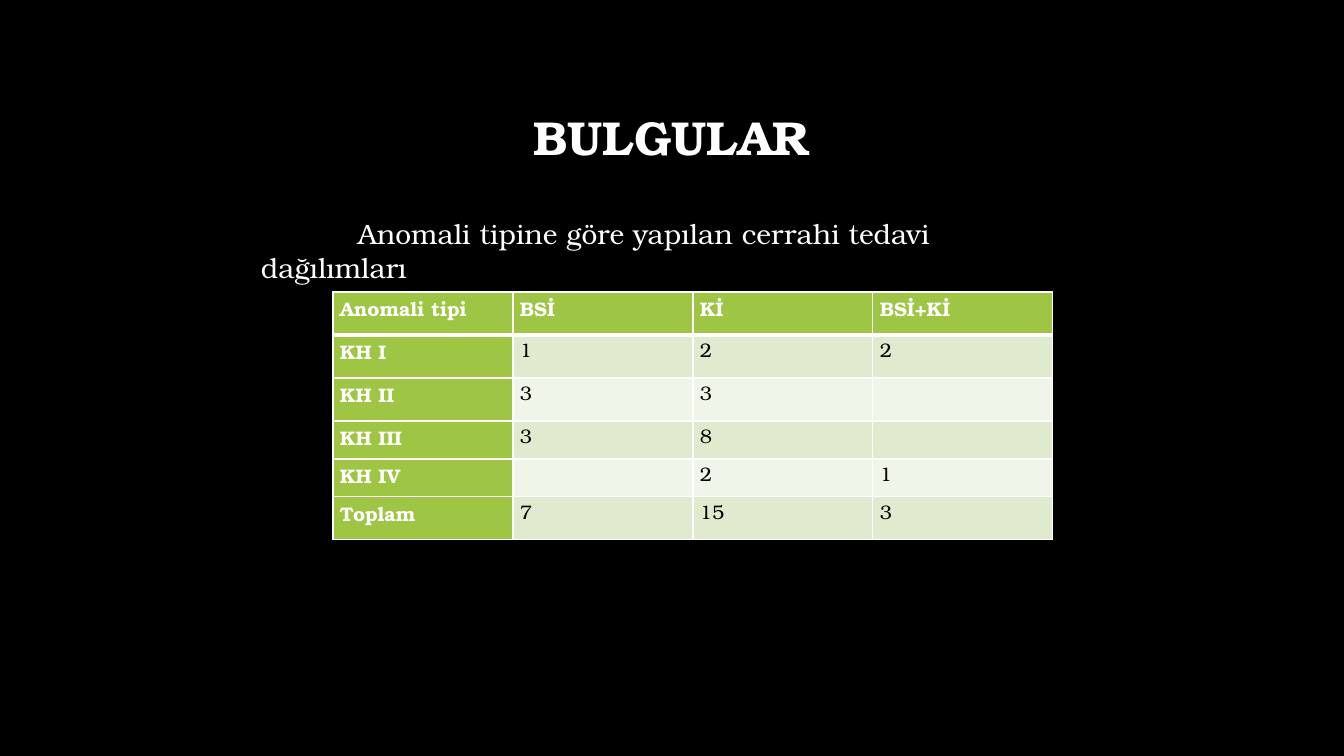
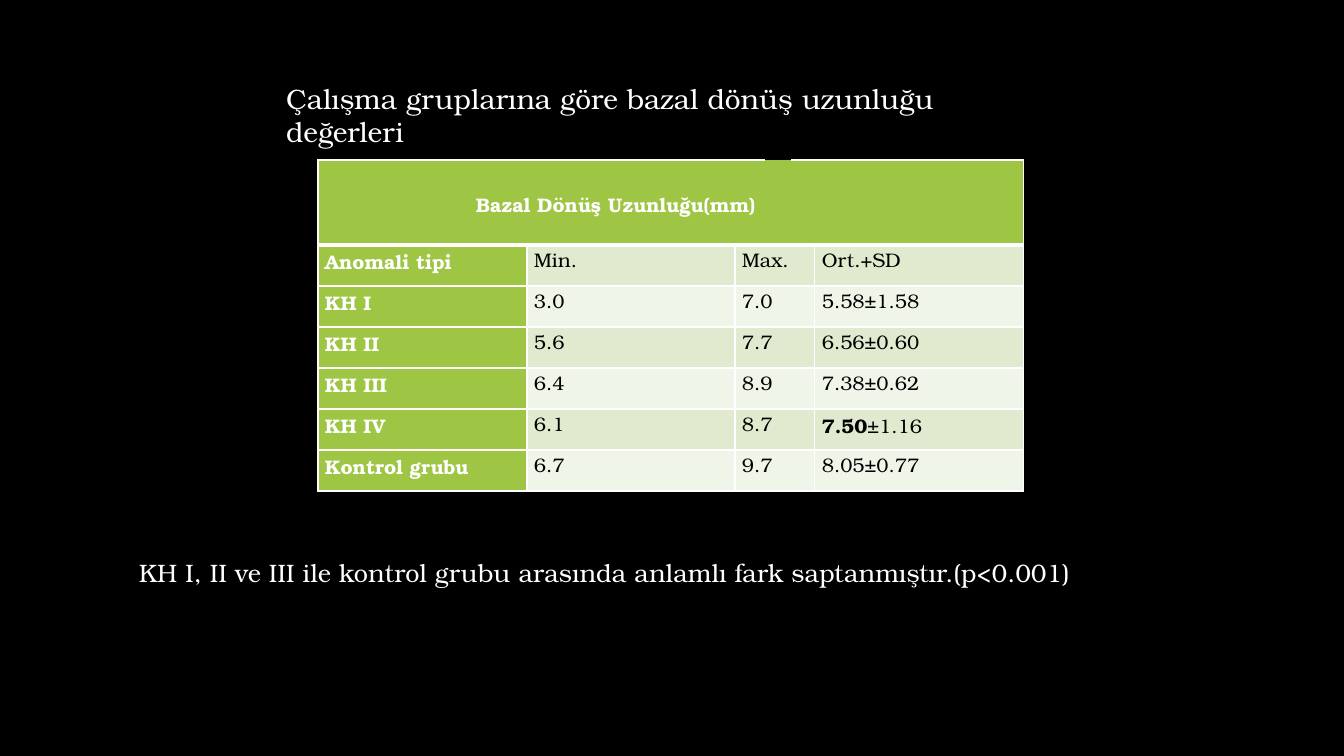
from lxml import etree
from pptx import Presentation
from pptx.dml.color import RGBColor
from pptx.enum.text import MSO_ANCHOR, MSO_AUTO_SIZE, PP_ALIGN
from pptx.oxml.ns import qn
from pptx.util import Pt

EMU_PER_PX = 12192000 / 1344
LEFT, CENTER, JUSTIFY = PP_ALIGN.LEFT, PP_ALIGN.CENTER, PP_ALIGN.JUSTIFY
TOP, MIDDLE = MSO_ANCHOR.TOP, MSO_ANCHOR.MIDDLE
NO_FIT = MSO_AUTO_SIZE.NONE
TITLE_ONLY = 5


def px(n):
    return round(n * EMU_PER_PX)


def rgb(color):
    return RGBColor.from_string(color)


class Deck:
    FONT = "TeX Gyre Bonum"
    BLACK, WHITE, GREEN = "000000", "FFFFFF", "9EC544"
    BANDS = ("F0F5E9", "DFEACF")

    def __init__(self):
        self.prs = Presentation()
        self.prs.slide_width, self.prs.slide_height = px(1344), px(756)
        fill = self.prs.slide_master.background.fill
        fill.solid()
        fill.fore_color.rgb = rgb(self.BLACK)

    def slide(self):
        self.s = self.prs.slides.add_slide(self.prs.slide_layouts[TITLE_ONLY])

    def set_text(self, tf, text, size, color, bold=False, align=LEFT, spacing=1.0):
        tf.text = text
        p = tf.paragraphs[0]
        p.alignment, p.line_spacing = align, spacing
        for r in p.runs:
            f = r.font
            f.name, f.size, f.bold = self.FONT, Pt(size), bold
            f.color.rgb = rgb(color)
        return p

    def title(self, text, x, y, w, h, size, bold=False, align=LEFT,
              anchor=TOP, spacing=1.0):
        sp = self.s.shapes.title
        sp.left, sp.top, sp.width, sp.height = px(x), px(y), px(w), px(h)
        tf = sp.text_frame
        tf.word_wrap, tf.auto_size, tf.vertical_anchor = True, NO_FIT, anchor
        self.set_text(tf, text, size, self.WHITE, bold, align, spacing)

    def text(self, text, x, y, w, h, size, indent=0):
        sp = self.s.shapes.add_textbox(px(x), px(y), px(w), px(h))
        tf = sp.text_frame
        tf.word_wrap = True
        p = self.set_text(tf, text, size, self.WHITE)
        self.indent(p, 0, indent)

    def indent(self, p, margin, first):
        pPr = p._p.get_or_add_pPr()
        pPr.set("marL", str(px(margin)))
        pPr.set("indent", str(px(first)))

    def borders(self, cell, thick_side, bare):
        tcPr = cell._tc.get_or_add_tcPr()
        for i, side in enumerate("LRTB"):
            ln = etree.Element(qn("a:ln" + side))
            ln.set("w", str(Pt(3 if side == thick_side else 1)))
            if side in bare:
                etree.SubElement(ln, qn("a:noFill"))
            else:
                fill = etree.SubElement(ln, qn("a:solidFill"))
                etree.SubElement(fill, qn("a:srgbClr")).set("val", self.WHITE)
            tcPr.insert(i, ln)

    def table(self, x, y, widths, heights, rows, bare=None):
        frame = self.s.shapes.add_table(len(rows), len(widths), px(x), px(y),
                                        px(sum(widths)), px(sum(heights)))
        table = frame.table
        for col, w in zip(table.columns, widths):
            col.width = px(w)
        for row, h in zip(table.rows, heights):
            row.height = px(h)
        for i, values in enumerate(rows):
            for j, value in enumerate(values):
                cell = table.cell(i, j)
                head = i == 0 or j == 0
                cell.margin_left = cell.margin_right = px(7)
                cell.margin_top = cell.margin_bottom = 0
                cell.fill.solid()
                cell.fill.fore_color.rgb = rgb(self.GREEN if head else self.BANDS[i % 2])
                self.set_text(cell.text_frame, value, 14,
                              self.WHITE if head else self.BLACK, head, JUSTIFY, 1.07)
                thick = {0: "B", 1: "T"}.get(i)
                self.borders(cell, thick, (bare or {}).get((i, j), ""))
        return table

    def bold_start(self, cell, length):
        p = cell.text_frame.paragraphs[0]
        start = p.runs[0]
        rest = p.add_run()
        rest.text, start.text = start.text[length:], start.text[:length]
        rest.font.name, rest.font.size = start.font.name, start.font.size
        rest.font.color.rgb = start.font.color.rgb
        start.font.bold, rest.font.bold = True, False


def findings(deck):
    deck.slide()
    deck.title("BULGULAR", 101, 67, 1141, 146, 34, True, CENTER, MIDDLE, 0.9)
    deck.table(333, 292, [180] * 4, [43, 43, 43, 38, 38, 43], [
        ("Anomali tipi", "BSİ", "Kİ", "BSİ+Kİ"),
        ("KH I", "1", "2", "2"),
        ("KH II", "3", "3", ""),
        ("KH III", "3", "8", ""),
        ("KH IV", "", "2", "1"),
        ("Toplam", "7", "15", "3"),
    ])
    deck.text("Anomali tipine göre yapılan cerrahi tedavi dağılımları",
              251, 212, 835, 78, 20, 97)


def basal_turn(deck):
    deck.slide()
    deck.title("Çalışma gruplarına göre bazal dönüş uzunluğu değerleri",
               276, 76, 780, 78, 20)
    measures = [
        ("Anomali tipi", "Min.", "Max.", "Ort.+SD"),
        ("KH I", "3.0", "7.0", "5.58±1.58"),
        ("KH II", "5.6", "7.7", "6.56±0.60"),
        ("KH III", "6.4", "8.9", "7.38±0.62"),
        ("KH IV", "6.1", "8.7", "7.50±1.16"),
        ("Kontrol grubu", "6.7", "9.7", "8.05±0.77"),
    ]
    rows = [("Bazal Dönüş Uzunluğu(mm)", "", "", "", "", "")]
    rows += [(group, low, high, "", "", mean) for group, low, high, mean in measures]
    bare = {(0, 0): "R", (0, 1): "LR", (0, 2): "LR",
            (0, 3): "LRT", (0, 4): "LR", (0, 5): "L"}
    table = deck.table(318, 160, [209, 208, 30, 26, 24, 209],
                       [85] + [41] * 6, rows, bare)
    header = table.cell(0, 0)
    header.merge(table.cell(0, 2))
    header.margin_top = px(28)
    deck.indent(header.text_frame.paragraphs[0], 151, 0)
    for i in range(1, len(rows)):
        table.cell(i, 2).merge(table.cell(i, 4))
    deck.bold_start(table.cell(5, 5), len("7.50"))
    deck.text("KH I, II ve III ile kontrol grubu arasında anlamlı fark "
              "saptanmıştır.(p<0.001)", 129, 552, 1066, 40, 18)


def main():
    deck = Deck()
    findings(deck)
    basal_turn(deck)
    deck.prs.save("out.pptx")


if __name__ == "__main__":
    main()
